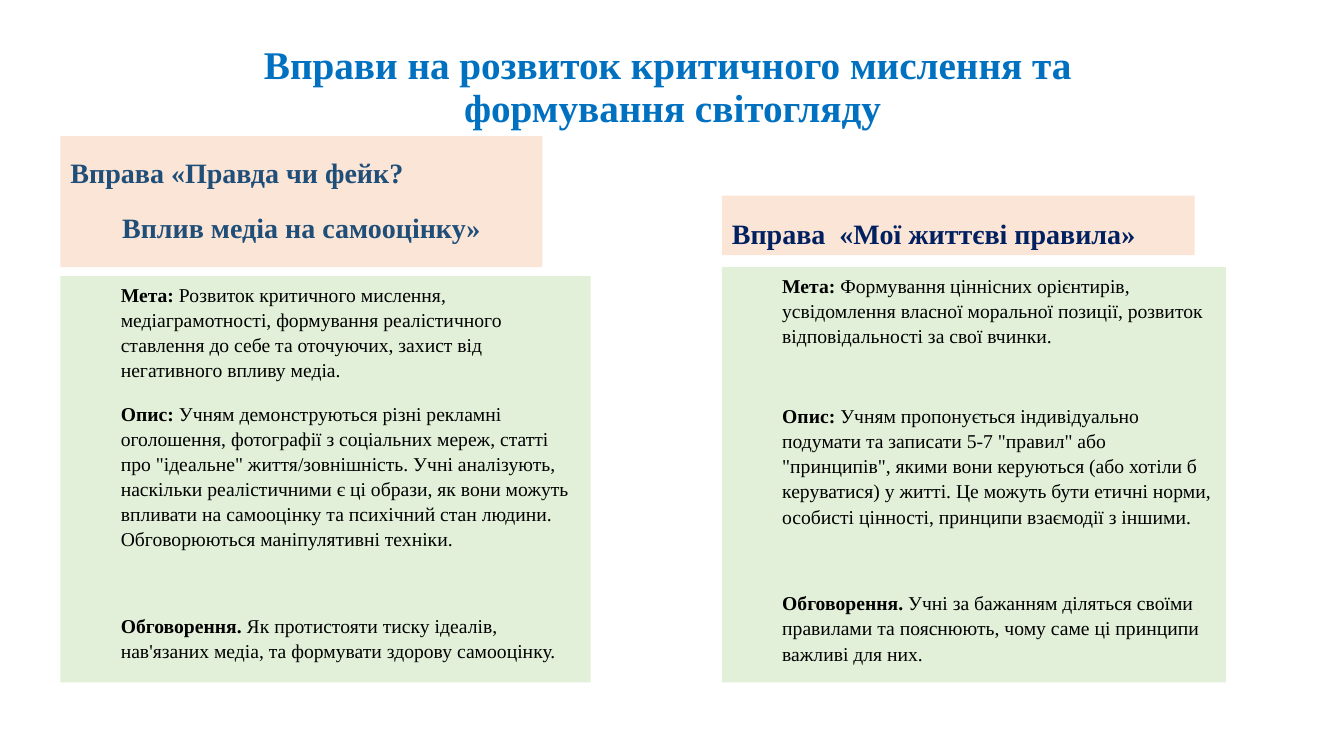
from dataclasses import dataclass

from pptx import Presentation
from pptx.dml.color import RGBColor
from pptx.enum.shapes import MSO_SHAPE
from pptx.enum.text import MSO_ANCHOR, MSO_AUTO_SIZE, PP_ALIGN
from pptx.util import Inches, Pt

RECTANGLE = MSO_SHAPE.RECTANGLE
TOP, MIDDLE, BOTTOM = MSO_ANCHOR.TOP, MSO_ANCHOR.MIDDLE, MSO_ANCHOR.BOTTOM
LEFT, CENTER = PP_ALIGN.LEFT, PP_ALIGN.CENTER
NO_AUTOFIT = MSO_AUTO_SIZE.NONE


@dataclass(frozen=True)
class Theme:
    font: str = "Times New Roman"
    title_color: str = "0070C0"
    text_color: str = "000000"
    heading_fill: str = "FBE5D6"
    body_fill: str = "E2F0D9"
    title_size: int = 28
    heading_size: int = 20
    body_size: int = 14


class ExerciseSlide:
    def __init__(self, presentation, theme):
        self.theme = theme
        self.slide = presentation.slides.add_slide(presentation.slide_layouts[5])

    def style(self, font, size, color, bold):
        font.name = self.theme.font
        font.size = Pt(size)
        font.bold = bold
        font.color.rgb = RGBColor.from_string(color)

    def title(self, text, left, top, width, height):
        shape = self.slide.shapes.title
        shape.left, shape.top = Inches(left), Inches(top)
        shape.width, shape.height = Inches(width), Inches(height)
        frame = shape.text_frame
        frame.text = text
        frame.auto_size = NO_AUTOFIT
        frame.vertical_anchor = MIDDLE
        paragraph = frame.paragraphs[0]
        paragraph.alignment = CENTER
        paragraph.line_spacing = 0.9
        for run in paragraph.runs:
            self.style(run.font, self.theme.title_size, self.theme.title_color, True)

    def panel(self, left, top, width, height, fill, anchor):
        shape = self.slide.shapes.add_shape(
            RECTANGLE, Inches(left), Inches(top), Inches(width), Inches(height))
        shape.shadow.inherit = False
        shape.fill.solid()
        shape.fill.fore_color.rgb = RGBColor.from_string(fill)
        shape.line.fill.background()
        frame = shape.text_frame
        frame.word_wrap = True
        frame.vertical_anchor = anchor
        return frame

    def heading(self, lines, box, color, bottom_inset):
        frame = self.panel(*box, self.theme.heading_fill, BOTTOM)
        frame.margin_bottom = Inches(bottom_inset)
        frame.text = "\n".join(text for text, _ in lines)
        for index, (paragraph, line) in enumerate(zip(frame.paragraphs, lines)):
            paragraph.alignment = line[1]
            paragraph.line_spacing = 0.87
            paragraph.space_before = Pt(18 if index else 0)
            self.style(paragraph.runs[0].font, self.theme.heading_size, color, True)

    def body(self, sections, box):
        frame = self.panel(*box, self.theme.body_fill, TOP)
        for index, (label, text, space_before) in enumerate(sections):
            paragraph = frame.add_paragraph() if index else frame.paragraphs[0]
            properties = paragraph._p.get_or_add_pPr()
            properties.set("marL", str(Inches(0.5)))
            properties.set("indent", "0")
            paragraph.alignment = LEFT
            paragraph.line_spacing = 1.07
            paragraph.space_before = Pt(space_before)
            paragraph.space_after = Pt(8)
            for words, bold in ((label, True), (" " + text, False)):
                run = paragraph.add_run()
                run.text = words
                self.style(run.font, self.theme.body_size, self.theme.text_color, bold)


# Each exercise: heading lines, heading box, heading colour, bottom inset,
# sections (label, text, space before) and body box
EXERCISES = [
    (
        [("Вправа «Правда чи фейк?", LEFT), ("Вплив медіа на самооцінку»", CENTER)],
        (0.6, 1.35, 4.78, 1.3), "1F4E79", 0.23,
        [
            ("Мета:", "Розвиток критичного мислення, медіаграмотності, формування "
             "реалістичного ставлення до себе та оточуючих, захист від негативного "
             "впливу медіа.", 0),
            ("Опис:", "Учням демонструються різні рекламні оголошення, фотографії з "
             "соціальних мереж, статті про \"ідеальне\" життя/зовнішність. Учні "
             "аналізують, наскільки реалістичними є ці образи, як вони можуть впливати "
             "на самооцінку та психічний стан людини. Обговорюються маніпулятивні "
             "техніки.", 5),
            ("Обговорення.", "Як протистояти тиску ідеалів, нав'язаних медіа, та "
             "формувати здорову самооцінку.", 36),
        ],
        (0.6, 2.74, 5.26, 4.03),
    ),
    (
        [("Вправа  «Мої життєві правила»", LEFT)],
        (7.16, 1.94, 4.69, 0.59), "002060", 0.05,
        [
            ("Мета:", "Формування ціннісних орієнтирів, усвідомлення власної моральної "
             "позиції, розвиток відповідальності за свої вчинки.", 0),
            ("Опис:", "Учням пропонується індивідуально подумати та записати 5-7 "
             "\"правил\" або \"принципів\", якими вони керуються (або хотіли б "
             "керуватися) у житті. Це можуть бути етичні норми, особисті цінності, "
             "принципи взаємодії з іншими.", 31),
            ("Обговорення.", "Учні за бажанням діляться своїми правилами та пояснюють, "
             "чому саме ці принципи важливі для них.", 36),
        ],
        (7.16, 2.65, 5, 4.12),
    ),
]


def main():
    presentation = Presentation()
    presentation.slide_width = Inches(13.33)
    presentation.slide_height = Inches(7.5)
    page = ExerciseSlide(presentation, Theme())

    # Title
    page.title("Вправи на розвиток критичного мислення та \vформування світогляду",
               0.92, 0.4, 11.5, 0.95)

    # Two exercise columns
    for lines, heading_box, color, bottom_inset, sections, body_box in EXERCISES:
        page.heading(lines, heading_box, color, bottom_inset)
        page.body(sections, body_box)

    presentation.save("out.pptx")


if __name__ == "__main__":
    main()
